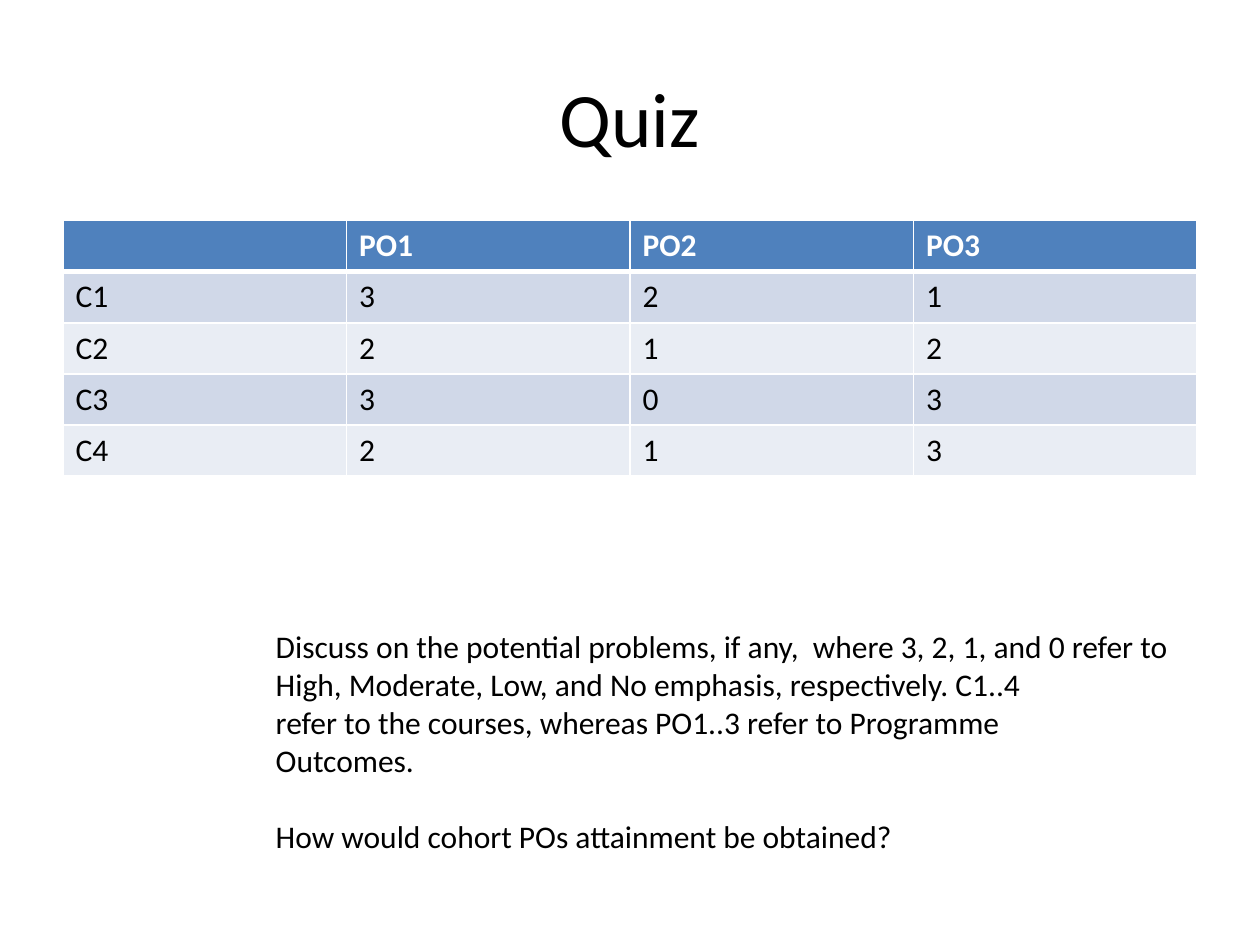
from lxml import etree
from pptx import Presentation, util as u
from pptx.dml.color import RGBColor
from pptx.enum import text as t
from pptx.oxml import ns

deck = Presentation()
deck.slide_width, deck.slide_height = u.Inches(10), u.Inches(7.5)
W, H = deck.slide_width, deck.slide_height
slide = deck.slides.add_slide(deck.slide_layouts[5])
MARGIN = int(W * 0.05)
CONTENT_WIDTH = W - 2 * MARGIN


def write(paragraph, wording, size=18, color="000000", bold=False,
          align=t.PP_ALIGN.LEFT, before=0):
    paragraph.alignment = align
    paragraph.space_before = u.Pt(before)
    run = paragraph.add_run()
    run.text = wording
    run.font.name, run.font.size, run.font.bold = "Calibri", u.Pt(size), bold
    run.font.color.rgb = RGBColor.from_string(color)


def paint_cell(cell, fill, **edges):
    """Fill a cell and draw white edges, with widths in points."""
    cell.fill.solid()
    cell.fill.fore_color.rgb = RGBColor.from_string(fill)
    properties = cell._tc.get_or_add_tcPr()
    for place, side in enumerate("LRTB"):
        line = etree.Element(ns.qn("a:ln" + side), w=str(u.Pt(edges.get(side, 1))))
        solid = etree.SubElement(line, ns.qn("a:solidFill"))
        etree.SubElement(solid, ns.qn("a:srgbClr"), val="FFFFFF")
        properties.insert(place, line)


# Title
title = slide.shapes.title
title.left, title.top = MARGIN, int(H * 0.04)
title.width, title.height = CONTENT_WIDTH, u.Inches(1.25)
title.text_frame.vertical_anchor = t.MSO_ANCHOR.MIDDLE
write(title.text_frame.paragraphs[0], "Quiz", size=44, align=t.PP_ALIGN.CENTER)

# Emphasis of each course on each programme outcome
emphasis = [
    ["", "PO1", "PO2", "PO3"],
    ["C1", "3", "2", "1"],
    ["C2", "2", "1", "2"],
    ["C3", "3", "0", "3"],
    ["C4", "2", "1", "3"],
]
matrix = slide.shapes.add_table(
    len(emphasis), len(emphasis[0]), MARGIN, u.Inches(1.75),
    CONTENT_WIDTH, u.Inches(2.03)).table
for row, values in enumerate(emphasis):
    header = row == 0
    fill = "4F81BD" if header else ("E9EDF4", "D0D8E8")[row % 2]
    edges = {0: {"B": 3}, 1: {"T": 3}}.get(row, {})
    for column, value in enumerate(values):
        cell = matrix.cell(row, column)
        paint_cell(cell, fill, **edges)
        if value:
            write(cell.text_frame.paragraphs[0], value, bold=header,
                  color="FFFFFF" if header else "000000")

# Discussion questions
questions = slide.shapes.add_textbox(
    u.Inches(2.09), u.Inches(4.93), u.Inches(7.43), u.Inches(1.92)).text_frame
questions.word_wrap = False
questions.auto_size = t.MSO_AUTO_SIZE.SHAPE_TO_FIT_TEXT
lines = [
    "Discuss on the potential problems, if any,  where 3, 2, 1, and 0 refer to",
    "High, Moderate, Low, and No emphasis, respectively. C1..4",
    "refer to the courses, whereas PO1..3 refer to Programme",
    "Outcomes.",
    "How would cohort POs attainment be obtained?",
]
for number, line in enumerate(lines):
    paragraph = questions.add_paragraph() if number else questions.paragraphs[0]
    write(paragraph, line, before=22 if line == lines[-1] else 0)

deck.save("out.pptx")
